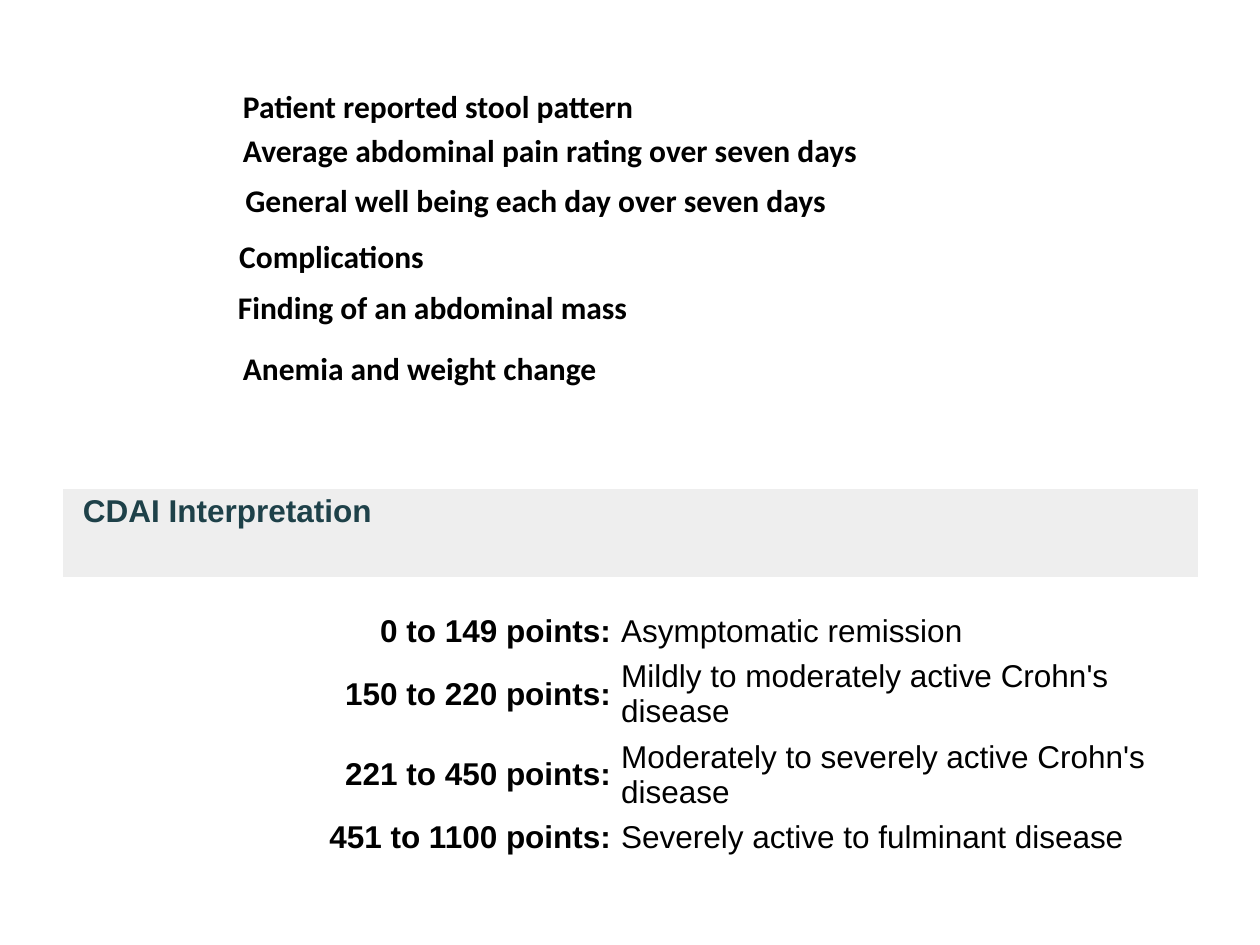
from dataclasses import dataclass

from pptx import Presentation
from pptx.dml.color import RGBColor
from pptx.enum.text import MSO_ANCHOR, MSO_AUTO_SIZE, PP_ALIGN
from pptx.util import Inches, Pt

COLORS = {"text": "000000", "heading": "1E4149", "band": "EEEEEE"}
PLAIN_TABLE_STYLE = "{2D5ABB26-0587-4C30-8999-92F81FD0307C}"
CELL_MARGIN = Inches(0.04)


@dataclass
class Factor:
    text: str
    left: float
    top: float
    width: float
    wrap: bool = False


@dataclass
class Score:
    points: str
    meaning: str
    height: float


FACTORS = [
    Factor("Patient reported stool pattern", 1.83, 0.64, 3.33),
    Factor("Average abdominal pain rating over seven days", 1.83, 0.99, 5.58, True),
    Factor("General well being each day over seven days", 1.85, 1.39, 4.84),
    Factor("Complications", 1.8, 1.83, 1.68),
    Factor("Finding of an abdominal mass", 1.79, 2.24, 3.32),
    Factor("Anemia and weight change", 1.83, 2.72, 3.03),
]

SCORES = [
    Score("0 to 149 points:", "Asymptomatic remission", 0.36),
    Score("150 to 220 points:", "Mildly to moderately active Crohn's disease", 0.64),
    Score("221 to 450 points:", "Moderately to severely active Crohn's disease", 0.64),
    Score("451 to 1100 points:", "Severely active to fulminant disease", 0.36),
]


def add_span(para, text: str, font: str, color: str = "text", bold: bool = True) -> None:
    span = para.add_run()
    span.text = text
    span.font.name = font
    span.font.size = Pt(18)
    span.font.bold = bold
    span.font.color.rgb = RGBColor.from_string(COLORS[color])


def add_factor(page, factor: Factor) -> None:
    box = page.shapes.add_textbox(
        Inches(factor.left), Inches(factor.top), Inches(factor.width), Inches(0.4))
    frame = box.text_frame
    frame.word_wrap = factor.wrap
    frame.auto_size = MSO_AUTO_SIZE.SHAPE_TO_FIT_TEXT
    add_span(frame.paragraphs[0], factor.text, "Calibri")


def add_plain_table(page, top: float, widths: list[float], heights: list[float]):
    frame = page.shapes.add_table(
        len(heights), len(widths), Inches(0.5), Inches(top),
        Inches(sum(widths)), Inches(sum(heights)))
    table = frame.table
    table.first_row = False
    table.horz_banding = False
    table._tbl.tblPr.find("{*}tableStyleId").text = PLAIN_TABLE_STYLE
    for column, width in zip(table.columns, widths):
        column.width = Inches(width)
    for row, height in zip(table.rows, heights):
        row.height = Inches(height)
    for cell in table.iter_cells():
        cell.margin_left = cell.margin_right = CELL_MARGIN
        cell.margin_top = cell.margin_bottom = CELL_MARGIN
        cell.fill.background()
    return table


def add_heading_band(page) -> None:
    table = add_plain_table(page, 3.88, [0.11, 8.89], [0.7])
    for cell in table.iter_cells():
        cell.fill.solid()
        cell.fill.fore_color.rgb = RGBColor.from_string(COLORS["band"])
    add_span(table.cell(0, 1).text_frame.paragraphs[0],
             "CDAI Interpretation", "Arial", "heading")


def add_score_table(page) -> None:
    table = add_plain_table(page, 4.83, [4.39, 4.39], [score.height for score in SCORES])
    for row, score in zip(table.rows, SCORES):
        points, meaning = row.cells
        points.vertical_anchor = meaning.vertical_anchor = MSO_ANCHOR.MIDDLE
        para = points.text_frame.paragraphs[0]
        para.alignment = PP_ALIGN.RIGHT
        add_span(para, score.points, "Arial")
        add_span(meaning.text_frame.paragraphs[0], score.meaning, "Arial", bold=False)


def main() -> None:
    deck = Presentation()
    deck.slide_width, deck.slide_height = Inches(10), Inches(7.5)
    page = deck.slides.add_slide(deck.slide_layouts[6])

    # Interpretation heading and score ranges
    add_heading_band(page)
    add_score_table(page)

    # Factors that make up the index
    for factor in FACTORS:
        add_factor(page, factor)

    deck.save("out.pptx")


if __name__ == "__main__":
    main()
